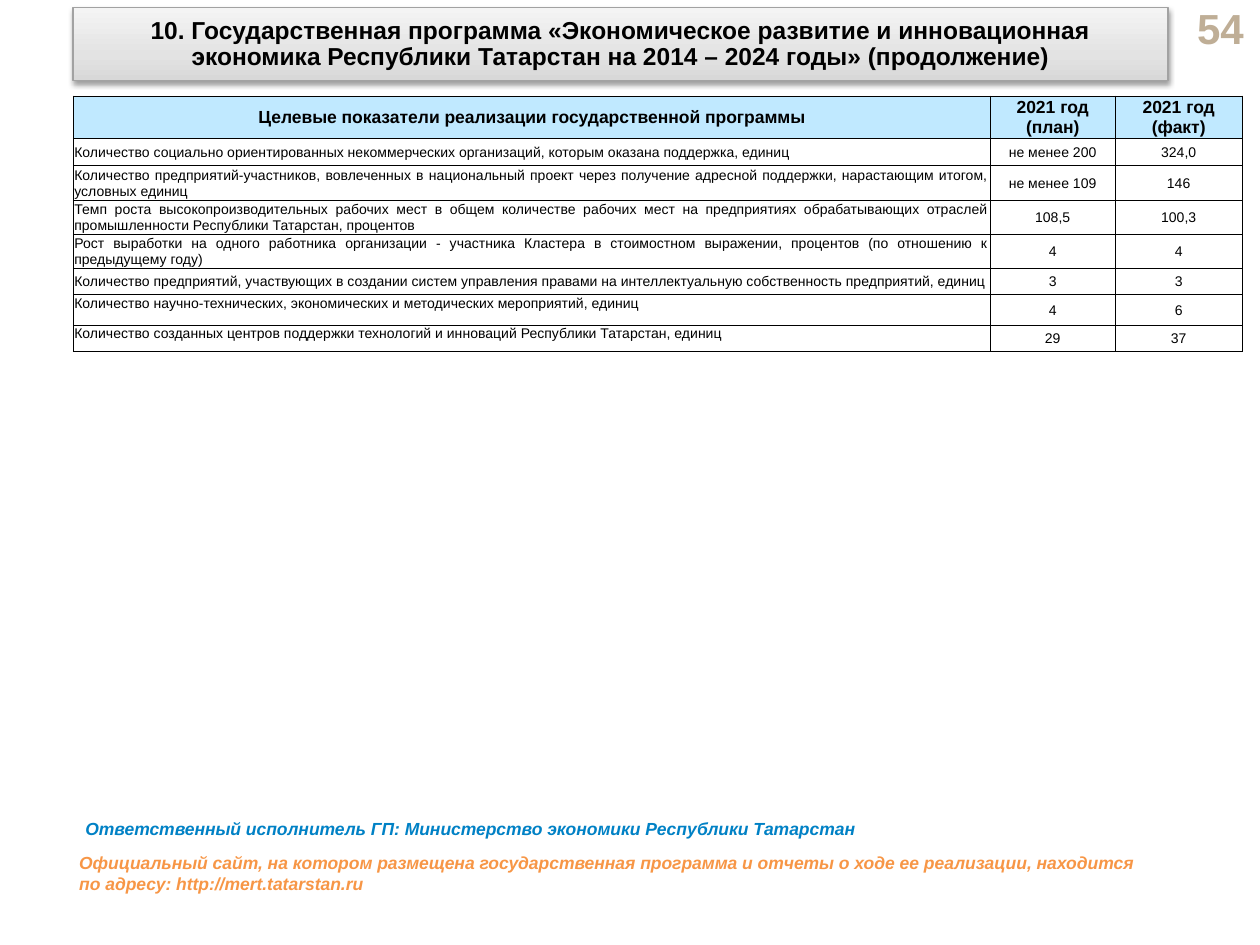
from lxml import etree
from pptx import Presentation
from pptx.dml.color import RGBColor as Rgb
from pptx.enum.text import MSO_ANCHOR as Anchor, MSO_AUTO_SIZE as Fit, PP_ALIGN as Align
from pptx.oxml import parse_xml
from pptx.oxml.ns import nsdecls, qn
from pptx.util import Inches, Pt

HEX = {
    "ink": "000000", "head": "C0E9FF", "cell": "FFFFFF", "page": "BFAE96",
    "blue": "0081C5", "orange": "F79646", "edge": "A2A2A2",
}
STOPS = [(0, "D8D8D8"), (35, "E3E3E3"), (100, "F4F4F4")]

TITLE = ("10. Государственная программа «Экономическое развитие и инновационная "
         "экономика Республики Татарстан на 2014 – 2024 годы» (продолжение)")
ROWS = [
    ("Целевые показатели реализации государственной программы",
     "2021 год (план)", "2021 год (факт)"),
    ("Количество социально ориентированных некоммерческих организаций, "
     "которым оказана поддержка, единиц", "не менее 200", "324,0"),
    ("Количество предприятий-участников, вовлеченных в национальный проект через "
     "получение адресной поддержки, нарастающим итогом, условных единиц",
     "не менее 109", "146"),
    ("Темп роста высокопроизводительных рабочих мест в общем количестве рабочих мест "
     "на предприятиях обрабатывающих отраслей промышленности Республики Татарстан, "
     "процентов", "108,5", "100,3"),
    ("Рост выработки на одного работника организации - участника Кластера в "
     "стоимостном выражении, процентов (по отношению к предыдущему году)", "4", "4"),
    ("Количество предприятий, участвующих в создании систем управления правами на "
     "интеллектуальную собственность предприятий, единиц", "3", "3"),
    ("Количество научно-технических, экономических и методических мероприятий, единиц",
     "4", "6"),
    ("Количество созданных центров поддержки технологий и инноваций "
     "Республики Татарстан, единиц", "29", "37"),
]
WIDTHS = [7.28, 0.99, 1.01]
HEIGHTS = [0.34, 0.21, 0.28, 0.27, 0.27, 0.21, 0.24, 0.21]
TOP_ROWS = (6, 7)
NOTES = [
    ("54", (9.33, 0.05, 0.64, 0.34), 24, "page", False, Align.RIGHT, Anchor.MIDDLE),
    ("Ответственный исполнитель ГП: Министерство экономики Республики Татарстан",
     (0.58, 6.44, 9.33, 0.27), 10, "blue", True, Align.LEFT, Anchor.TOP),
    ("Официальный сайт, на котором размещена государственная программа и отчеты о ходе "
     "ее реализации, находится по адресу: http://mert.tatarstan.ru",
     (0.53, 6.71, 8.75, 0.44), 10, "orange", True, Align.LEFT, Anchor.TOP),
]


def style(para, size, color, bold=True, slant=False, align=Align.CENTER):
    para.alignment = align
    font = para.font
    font.name, font.size, font.bold, font.italic = "Arial", Pt(size), bold, slant
    font.color.rgb = Rgb.from_string(HEX[color])


def add_title(slide):
    box = slide.shapes.title
    box.left, box.top, box.width, box.height = map(Inches, (0.58, 0.06, 8.69, 0.58))
    props = box._element.spPr
    stops = "".join(f'<a:gs pos="{pos * 1000}"><a:srgbClr val="{tone}"/></a:gs>'
                    for pos, tone in STOPS)
    ns = nsdecls("a")
    props.append(parse_xml(f'<a:prstGeom {ns} prst="roundRect"><a:avLst/></a:prstGeom>'))
    props.append(parse_xml(f'<a:gradFill {ns} rotWithShape="1"><a:gsLst>{stops}</a:gsLst>'
                           '<a:lin ang="16200000" scaled="0"/></a:gradFill>'))
    box.line.color.rgb = Rgb.from_string(HEX["edge"])
    box.line.width = Pt(0.75)
    props.append(parse_xml(
        f'<a:effectLst {ns}><a:outerShdw blurRad="{Pt(3.1)}" dist="{Pt(1.6)}" '
        'dir="5400000" rotWithShape="0"><a:srgbClr val="000000"><a:alpha val="38000"/>'
        '</a:srgbClr></a:outerShdw></a:effectLst>'))
    frame = box.text_frame
    frame.text = TITLE
    frame.word_wrap = True
    frame.auto_size = Fit.NONE
    frame.vertical_anchor = Anchor.MIDDLE
    para = frame.paragraphs[0]
    para.line_spacing = Pt(15)
    para.space_before = Pt(0)
    style(para, 14, "ink")


def add_borders(cell):
    props = cell._tc.get_or_add_tcPr()
    for spot, side in enumerate(("lnL", "lnR", "lnT", "lnB")):
        line = etree.Element(qn(f"a:{side}"), w=str(Pt(0.25)))
        fill = etree.SubElement(line, qn("a:solidFill"))
        etree.SubElement(fill, qn("a:srgbClr"), val=HEX["ink"])
        props.insert(spot, line)


def add_grid(slide):
    size = (0.58, 0.76, sum(WIDTHS), sum(HEIGHTS))
    grid = slide.shapes.add_table(len(ROWS), len(WIDTHS), *map(Inches, size)).table
    grid.first_row = grid.horz_banding = False
    for col, width in zip(grid.columns, WIDTHS):
        col.width = Inches(width)
    for r, (row, height) in enumerate(zip(ROWS, HEIGHTS)):
        grid.rows[r].height = Inches(height)
        head = r == 0
        for c, text in enumerate(row):
            cell = grid.cell(r, c)
            cell.text = text
            cell.margin_left = cell.margin_right = cell.margin_top = Inches(0.01)
            cell.margin_bottom = 0
            high = c == 0 and r in TOP_ROWS
            cell.vertical_anchor = Anchor.TOP if high else Anchor.MIDDLE
            cell.fill.solid()
            cell.fill.fore_color.rgb = Rgb.from_string(HEX["head" if head else "cell"])
            align = Align.CENTER if head or c else Align.JUSTIFY
            style(cell.text_frame.paragraphs[0], 10 if head else 8, "ink", head, align=align)
            add_borders(cell)


def add_note(slide, text, place, size, color, slant, align, anchor):
    frame = slide.shapes.add_textbox(*map(Inches, place)).text_frame
    frame.word_wrap = True
    frame.vertical_anchor = anchor
    frame.text = text
    style(frame.paragraphs[0], size, color, slant=slant, align=align)


def main():
    deck = Presentation()
    deck.slide_width, deck.slide_height = Inches(10), Inches(7.5)
    slide = deck.slides.add_slide(deck.slide_layouts[5])
    add_title(slide)
    add_grid(slide)
    for note in NOTES:
        add_note(slide, *note)
    deck.save("out.pptx")


if __name__ == "__main__":
    main()
